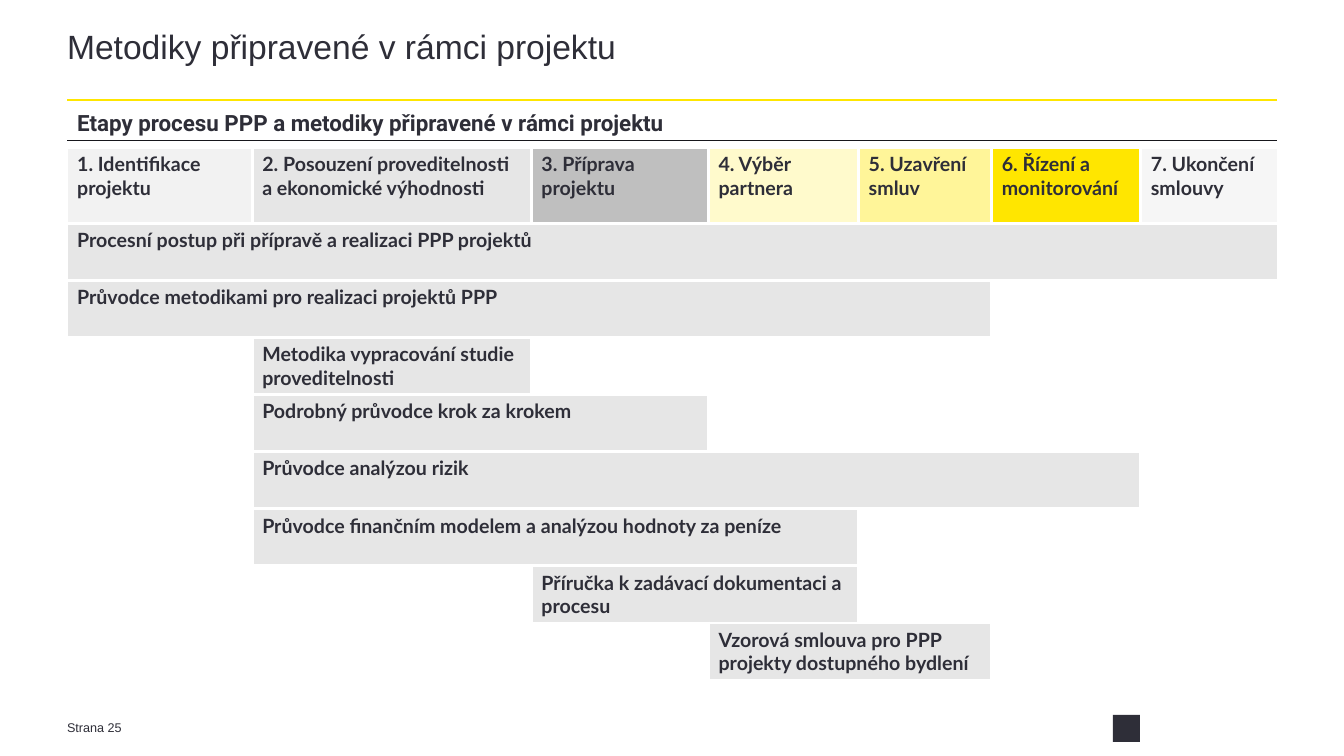
from dataclasses import dataclass

import pptx
import pptx.dml.color
import pptx.enum.shapes
import pptx.enum.text
import pptx.oxml
import pptx.oxml.ns
import pptx.util

PX = 9080


@dataclass(frozen=True)
class Theme:
    ink: str = "2E2E38"
    rule: str = "17171C"
    accent: str = "FFE600"
    bar: str = "E6E6E6"
    blank: str = "FFFFFF"
    title_size: int = 24
    heading_size: int = 16
    table_size: int = 14
    footer_size: int = 9
    border_width: float = 2.25


THEME = Theme()
COLUMN_WIDTHS = [185, 279, 177, 86, 64, 133, 149, 137]
ROW_HEIGHTS = [76] + [57] * 8
STAGES = [
    ("1. Identifikace projektu", 0, 0, "F2F2F2"),
    ("2. Posouzení proveditelnosti a ekonomické výhodnosti", 1, 1, "E6E6E6"),
    ("3. Příprava \vprojektu", 2, 2, "BFBFBF"),
    ("4. Výběr \vpartnera", 3, 4, "FFFACC"),
    ("5. Uzavření smluv", 5, 5, "FFF599"),
    ("6. Řízení a monitorování", 6, 6, "FFE600"),
    ("7. Ukončení smlouvy", 7, 7, "F6F6F6"),
]
METHODS = [
    ("Procesní postup při přípravě a realizaci PPP projektů", 0, 7),
    ("Průvodce metodikami pro realizaci projektů PPP", 0, 5),
    ("Metodika vypracování studie proveditelnosti", 1, 1),
    ("Podrobný průvodce krok za krokem", 1, 2),
    ("Průvodce analýzou rizik", 1, 6),
    ("Průvodce finančním modelem a analýzou hodnoty za peníze", 1, 4),
    ("Příručka k zadávací dokumentaci a procesu", 2, 4),
    ("Vzorová smlouva pro PPP projekty dostupného bydlení", 3, 5),
]


def px(*lengths):
    return [pptx.util.Emu(length * PX) for length in lengths]


def color(value):
    return pptx.dml.color.RGBColor.from_string(value)


def apply_format(target, values):
    for name, value in values.items():
        setattr(target, name, value)


def write(text_frame, text, font, size, bold=False, **paragraph_format):
    text_frame.text = text
    paragraph = text_frame.paragraphs[0]
    apply_format(paragraph, {"alignment": pptx.enum.text.PP_ALIGN.LEFT, **paragraph_format})
    for run in paragraph.runs:
        apply_format(run.font, {"name": font, "size": pptx.util.Pt(size), "bold": bold})
        run.font.color.rgb = color(THEME.ink)


def set_frame(text_frame, left, top, right, bottom):
    margins = dict(zip(("margin_left", "margin_top", "margin_right", "margin_bottom"),
                       px(left, top, right, bottom)))
    apply_format(text_frame, {
        "word_wrap": True,
        "auto_size": pptx.enum.text.MSO_AUTO_SIZE.NONE,
        "vertical_anchor": pptx.enum.text.MSO_ANCHOR.TOP,
        **margins,
    })


def add_title(slide, text):
    title = slide.shapes.title
    apply_format(title, dict(zip(("left", "top", "width", "height"), px(67, 32, 1209, 65))))
    set_frame(title.text_frame, 0, 0, 0, 0)
    write(title.text_frame, text, "Arial", THEME.title_size, line_spacing=0.85)


def add_text(slide, box, margins, text, font, size, **text_format):
    text_frame = slide.shapes.add_textbox(*px(*box)).text_frame
    set_frame(text_frame, *margins)
    write(text_frame, text, font, size, space_after=pptx.util.Pt(6), **text_format)


def add_rule(slide, top, line_color, width):
    connector = slide.shapes.add_connector(
        pptx.enum.shapes.MSO_CONNECTOR.STRAIGHT, *px(67, top, 1276, top))
    connector.line.color.rgb = color(line_color)
    connector.line.width = pptx.util.Pt(width)
    properties = connector._element.spPr
    properties.append(properties.makeelement(pptx.oxml.ns.qn("a:effectLst"), {}))


def add_footer_mark(slide):
    mark = slide.shapes.add_shape(
        pptx.enum.shapes.MSO_SHAPE.RECTANGLE, *px(1112, 714, 27, 27))
    mark.shadow.inherit = False
    mark.fill.solid()
    mark.fill.fore_color.rgb = color(THEME.ink)
    mark.line.fill.background()


def fill_cell(cell, fill_color):
    cell.fill.solid()
    cell.fill.fore_color.rgb = color(fill_color)


def add_borders(cell):
    properties = cell._tc.get_or_add_tcPr()
    width = pptx.util.Pt(THEME.border_width)
    for side in ("lnL", "lnR", "lnT", "lnB"):
        properties.append(pptx.oxml.parse_xml(
            f'<a:{side} {pptx.oxml.ns.nsdecls("a")} w="{width}"><a:solidFill>'
            f'<a:srgbClr val="{THEME.blank}"/></a:solidFill></a:{side}>'))


def add_bar(table, row, text, first, last, fill_color):
    cell = table.cell(row, first)
    if last > first:
        cell.merge(table.cell(row, last))
    write(cell.text_frame, text, "Lato", THEME.table_size, bold=True)
    fill_cell(cell, fill_color)


def add_stage_table(slide):
    box = px(67, 147, sum(COLUMN_WIDTHS), sum(ROW_HEIGHTS))
    table = slide.shapes.add_table(len(ROW_HEIGHTS), len(COLUMN_WIDTHS), *box).table
    apply_format(table, {"first_row": False, "horz_banding": False})
    for column, width in zip(table.columns, px(*COLUMN_WIDTHS)):
        column.width = width
    for row, height in zip(table.rows, px(*ROW_HEIGHTS)):
        row.height = height
    for cell in table.iter_cells():
        add_borders(cell)
        fill_cell(cell, THEME.blank)
    for stage in STAGES:
        add_bar(table, 0, *stage)
    for row, method in enumerate(METHODS, start=1):
        add_bar(table, row, *method, THEME.bar)


def main():
    presentation = pptx.Presentation()
    apply_format(presentation, dict(zip(("slide_width", "slide_height"), px(1343, 755))))
    slide = presentation.slides.add_slide(presentation.slide_layouts[5])
    add_footer_mark(slide)
    add_text(slide, (67, 717, 101, 17), (0, 4, 0, 0), "Strana 25",
             "Arial", THEME.footer_size, line_spacing=0.85)
    add_rule(slide, 100, THEME.accent, 1.5)
    add_title(slide, "Metodiky připravené v rámci projektu")
    add_rule(slide, 140, THEME.rule, 0.75)
    add_text(slide, (67, 104, 1209, 37), (10, 5, 10, 5),
             "Etapy procesu PPP a metodiky připravené v rámci projektu",
             "Roboto", THEME.heading_size, bold=True)
    add_stage_table(slide)
    presentation.save("out.pptx")


if __name__ == "__main__":
    main()
